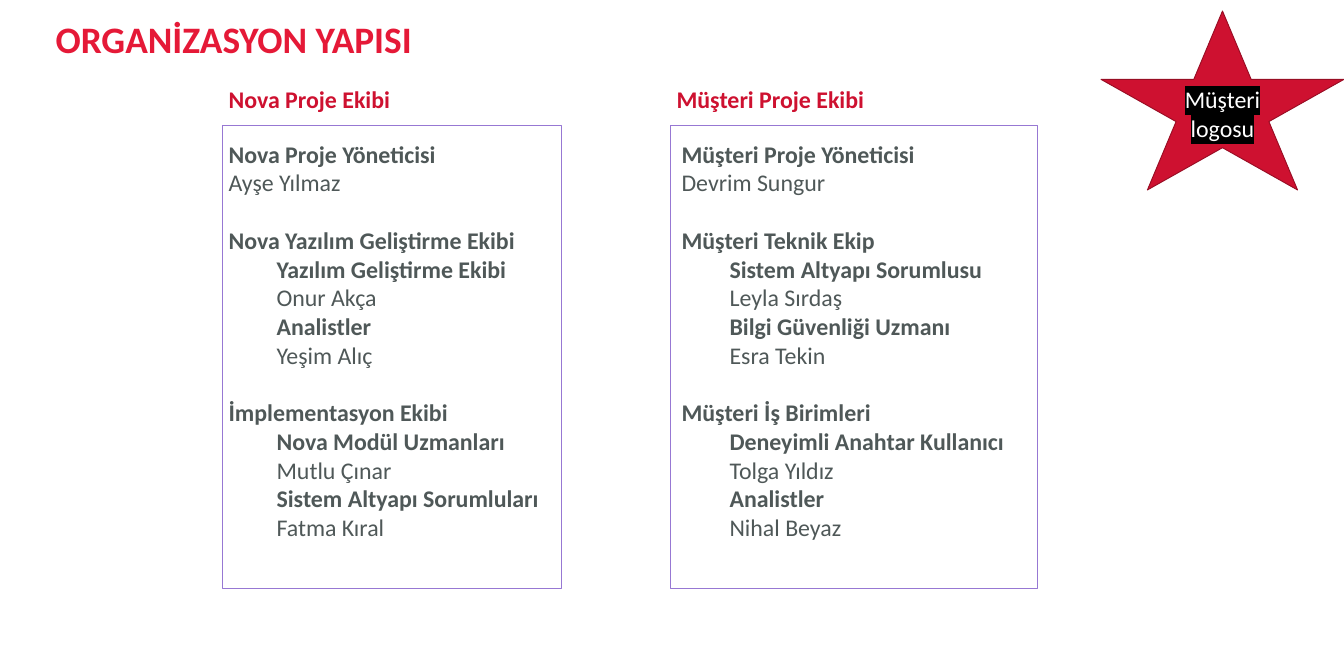
from lxml.etree import SubElement
from pptx import Presentation
from pptx.dml.color import RGBColor
from pptx.enum.shapes import MSO_SHAPE
from pptx.enum.text import MSO_ANCHOR, PP_ALIGN
from pptx.oxml.ns import qn
from pptx.util import Emu, Pt

PX = 914400 / 67.2  # EMU in one px
RED, GREY, WHITE = "CE1130", "4F5858", "FFFFFF"
INDENT = 48


def px(*lengths):
    return [Emu(round(length * PX)) for length in lengths]


def add_run(paragraph, text, color, size=25.6, bold=False):
    run = paragraph.add_run()
    run.text = text
    font_format = {"name": "Calibri", "size": Pt(size), "bold": bold}
    for attribute, value in font_format.items():
        setattr(run.font, attribute, value)
    run.font.color.rgb = RGBColor.from_string(color)
    return run


presentation = Presentation()
presentation.slide_width, presentation.slide_height = px(1344, 645)
slide = presentation.slides.add_slide(presentation.slide_layouts[6])
shapes = slide.shapes

# Title
title = shapes.add_textbox(*px(49, 5, 1152, 73)).text_frame
title.word_wrap = True
title.vertical_anchor = MSO_ANCHOR.MIDDLE
title.paragraphs[0].line_spacing = 0.9
add_run(title.paragraphs[0], "ORGANİZASYON YAPISI", "E51937", 40, True)

# Teams: heading, frame left and width, list left and width,
# then groups of a heading followed by roles and names in turn
teams = [
    ("Nova Proje Ekibi", 222, 339, 222, 329, [
        ["Nova Proje Yöneticisi", "Ayşe Yılmaz"],
        ["Nova Yazılım Geliştirme Ekibi", "Yazılım Geliştirme Ekibi", "Onur Akça",
         "Analistler", "Yeşim Alıç"],
        ["İmplementasyon Ekibi", "Nova Modül Uzmanları", "Mutlu Çınar",
         "Sistem Altyapı Sorumluları", "Fatma Kıral"],
    ]),
    ("Müşteri Proje Ekibi", 670, 367, 675, 352, [
        ["Müşteri Proje Yöneticisi", "Devrim Sungur"],
        ["Müşteri Teknik Ekip", "Sistem Altyapı Sorumlusu", "Leyla Sırdaş",
         "Bilgi Güvenliği Uzmanı", "Esra Tekin"],
        ["Müşteri İş Birimleri", "Deneyimli Anahtar Kullanıcı", "Tolga Yıldız",
         "Analistler", "Nihal Beyaz"],
    ]),
]

for heading, frame_left, frame_width, list_left, list_width, groups in teams:
    # Frame
    frame = shapes.add_shape(MSO_SHAPE.RECTANGLE, *px(frame_left, 125, frame_width, 463))
    frame.shadow.inherit = False
    frame.fill.background()
    frame.line.color.rgb = RGBColor.from_string("9778D3")
    frame.line.width = Pt(0.5)

    # Heading above the frame
    heading_text = shapes.add_textbox(*px(frame_left, 81, 309, 36)).text_frame
    heading_text.word_wrap = True
    add_run(heading_text.paragraphs[0], heading, RED, bold=True)

    # Members
    members = shapes.add_textbox(*px(list_left, 136, list_width, 412)).text_frame
    members.word_wrap = True
    for group_number, group in enumerate(groups):
        for position, text in enumerate(group):
            first = group_number == position == 0
            paragraph = members.paragraphs[0] if first else members.add_paragraph()
            if position == 0 and not first:
                paragraph.space_before = Pt(31)
            if len(group) > 2 and position > 0:
                properties = paragraph._p.get_or_add_pPr()
                properties.set("marL", str(px(INDENT)[0]))
                properties.set("indent", "0")
                properties.set("lvl", "1")
            # A pair is role and name; a longer group has its own heading first
            bold = position == 0 or (len(group) > 2 and position % 2 == 1)
            add_run(paragraph, text, GREY, bold=bold)

# Star that holds the place of the customer's logo
star = shapes.add_shape(MSO_SHAPE.STAR_5_POINT, *px(1101, 11, 243, 179))
star.shadow.inherit = False
star.fill.solid()
star.fill.fore_color.rgb = RGBColor.from_string(RED)
star.line.color.rgb = RGBColor.from_string("980D24")
star.line.width = Pt(1)
star.text_frame.word_wrap = True
star.text_frame.vertical_anchor = MSO_ANCHOR.MIDDLE
paragraph = star.text_frame.paragraphs[0]
paragraph.alignment = PP_ALIGN.CENTER
run = add_run(paragraph, "Müşteri logosu", WHITE)

# Black highlight, which must follow the text colour
run_properties = run._r.get_or_add_rPr()
highlight = SubElement(run_properties, qn("a:highlight"))
SubElement(highlight, qn("a:srgbClr"), val="000000")
run_properties.find(qn("a:solidFill")).addnext(highlight)

presentation.save("out.pptx")
